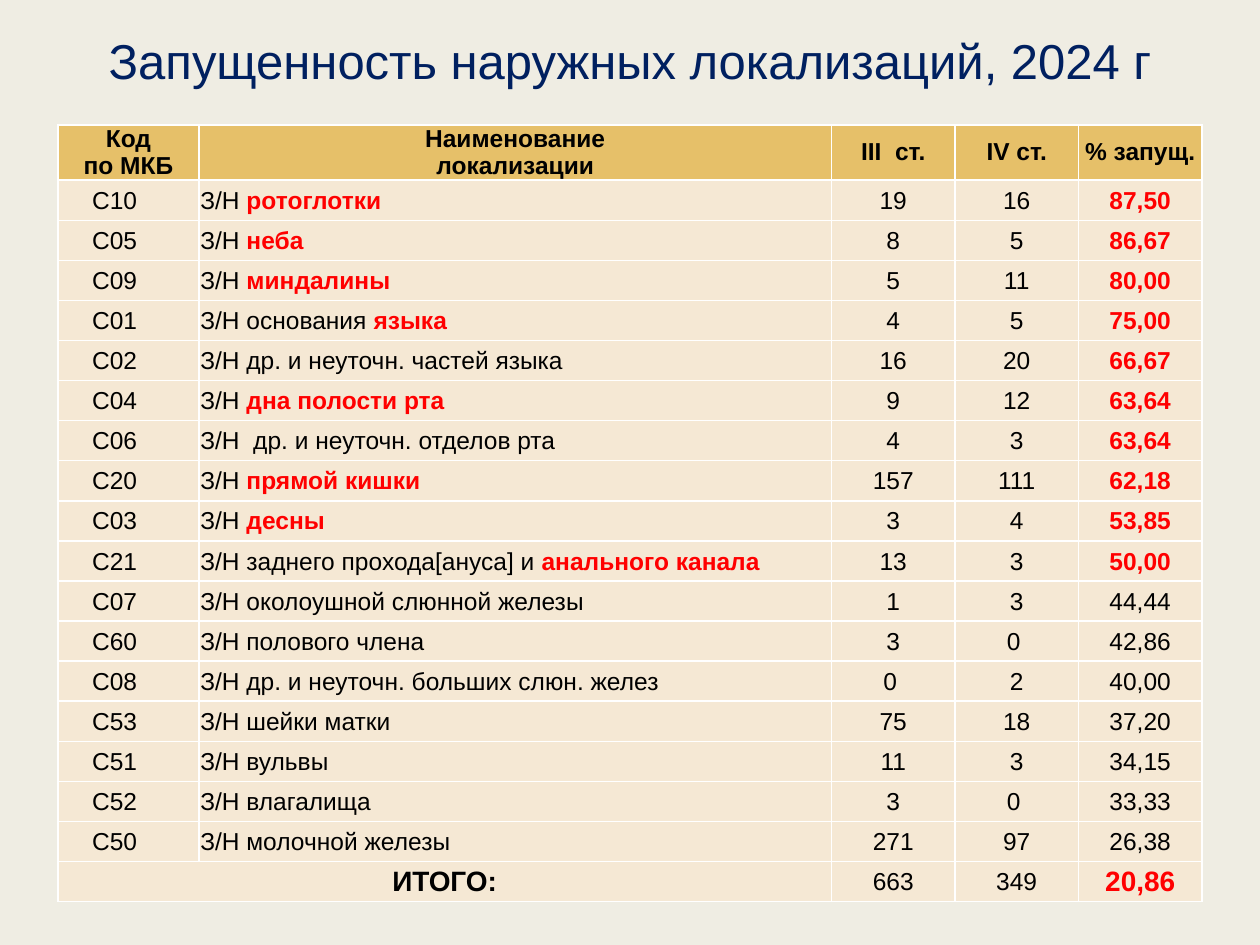
import pptx
import pptx.dml.color
import pptx.enum.text
import pptx.oxml.ns
import pptx.util
from lxml import etree

RGBColor = pptx.dml.color.RGBColor
Inches, Pt = pptx.util.Inches, pptx.util.Pt
PP_ALIGN = pptx.enum.text.PP_ALIGN
MIDDLE = pptx.enum.text.MSO_ANCHOR.MIDDLE
qn = pptx.oxml.ns.qn

BACKGROUND = RGBColor(0xEF, 0xED, 0xE3)
NAVY = RGBColor(0x00, 0x20, 0x60)
GOLD = RGBColor(0xE6, 0xC0, 0x69)
CREAM = RGBColor(0xF5, 0xE8, 0xD4)
BLACK = RGBColor(0x00, 0x00, 0x00)
RED = RGBColor(0xFF, 0x00, 0x00)
WHITE = RGBColor(0xFF, 0xFF, 0xFF)

FONT = "Arial"
SLIDE_W, SLIDE_H = 10, 7.5
COL_WIDTHS = [1.12, 5.02, 0.98, 0.98, 0.98]
TABLE_TOP, TABLE_H, HEADER_H = 0.99, 6.17, 0.44
INSET = 0.01
CODE_INSET = 0.23  # keeps the codes left of the column's middle
ZERO_INSET = 0.06  # the same for zero counts
LATE_SHARE = 50    # percentages from here on are highlighted

HEADERS = ["Код\nпо МКБ", "Наименование\nлокализации", "III  cт.", "IV ст.", "% запущ."]

# code, plain name, highlighted name, stage III, stage IV, percentage
SITES = [
    ("C10", "З/Н ", "ротоглотки", "19", "16", "87,50"),
    ("C05", "З/Н ", "неба", "8", "5", "86,67"),
    ("C09", "З/Н ", "миндалины", "5", "11", "80,00"),
    ("C01", "З/Н основания ", "языка", "4", "5", "75,00"),
    ("C02", "З/Н др. и неуточн. частей языка", "", "16", "20", "66,67"),
    ("C04", "З/Н ", "дна полости рта", "9", "12", "63,64"),
    ("C06", "З/Н  др. и неуточн. отделов рта", "", "4", "3", "63,64"),
    ("C20", "З/Н ", "прямой кишки", "157", "111", "62,18"),
    ("C03", "З/Н ", "десны", "3", "4", "53,85"),
    ("C21", "З/Н заднего прохода[ануса] и ", "анального канала", "13", "3", "50,00"),
    ("C07", "З/Н околоушной слюнной железы", "", "1", "3", "44,44"),
    ("C60", "З/Н полового члена", "", "3", "0", "42,86"),
    ("C08", "З/Н др. и неуточн. больших слюн. желез", "", "0", "2", "40,00"),
    ("C53", "З/Н шейки матки", "", "75", "18", "37,20"),
    ("C51", "З/Н вульвы", "", "11", "3", "34,15"),
    ("C52", "З/Н влагалища", "", "3", "0", "33,33"),
    ("C50", "З/Н молочной железы", "", "271", "97", "26,38"),
]


def add_run(p, text, size=14, color=BLACK, bold=False):
    r = p.add_run()
    r.text = text
    r.font.name = FONT
    r.font.size = Pt(size)
    r.font.bold = bold
    r.font.color.rgb = color


def set_borders(cell):
    tc_pr = cell._tc.get_or_add_tcPr()
    for side in ("a:lnL", "a:lnR", "a:lnT", "a:lnB"):
        ln = etree.SubElement(tc_pr, qn(side), w=str(Pt(1)))
        fill = etree.SubElement(ln, qn("a:solidFill"))
        etree.SubElement(fill, qn("a:srgbClr"), val=str(WHITE))


def format_cell(cell, fill, align=PP_ALIGN.CENTER, right=INSET):
    """Style the cell and return its paragraph, ready for runs."""
    set_borders(cell)
    cell.fill.solid()
    cell.fill.fore_color.rgb = fill
    cell.vertical_anchor = MIDDLE
    cell.margin_left = cell.margin_top = Inches(INSET)
    cell.margin_right = Inches(right)
    cell.margin_bottom = 0
    p = cell.text_frame.paragraphs[0]
    p.alignment = align
    return p


def fill_header(table):
    for col, text in enumerate(HEADERS):
        p = format_cell(table.cell(0, col), GOLD)
        p.line_spacing = 0.95
        for i, line in enumerate(text.split("\n")):
            if i:
                p.add_line_break()
            add_run(p, line, bold=True)


def fill_site(table, row, site):
    code, plain, marked, stage3, stage4, share = site
    add_run(format_cell(table.cell(row, 0), CREAM, right=CODE_INSET), code)
    p = format_cell(table.cell(row, 1), CREAM, PP_ALIGN.LEFT)
    add_run(p, plain)
    if marked:
        add_run(p, marked, color=RED, bold=True)
    for col, count in enumerate((stage3, stage4), 2):
        right = ZERO_INSET if count == "0" else INSET
        add_run(format_cell(table.cell(row, col), CREAM, right=right), count)
    late = float(share.replace(",", ".")) >= LATE_SHARE
    add_run(format_cell(table.cell(row, 4), CREAM), share,
            color=RED if late else BLACK, bold=late)


def fill_total(table, row):
    ps = [format_cell(table.cell(row, col), CREAM) for col in range(len(COL_WIDTHS))]
    table.cell(row, 0).merge(table.cell(row, 1))
    add_run(ps[0], "ИТОГО:", size=16, bold=True)
    add_run(ps[2], "663")
    add_run(ps[3], "349")
    add_run(ps[4], "20,86", size=16, color=RED, bold=True)


def add_site_table(s):
    n_rows = len(SITES) + 2
    width = sum(COL_WIDTHS)
    table = s.shapes.add_table(
        n_rows, len(COL_WIDTHS), Inches((SLIDE_W - width) / 2), Inches(TABLE_TOP),
        Inches(width), Inches(TABLE_H)).table
    for column, w in zip(table.columns, COL_WIDTHS):
        column.width = Inches(w)
    for row in table.rows:
        row.height = Inches((TABLE_H - HEADER_H) / (n_rows - 1))
    table.rows[0].height = Inches(HEADER_H)
    fill_header(table)
    for row, site in enumerate(SITES, 1):
        fill_site(table, row, site)
    fill_total(table, n_rows - 1)


def set_title(s, text):
    sp = s.shapes.title
    sp.left, sp.top, sp.width, sp.height = 0, Inches(0.29), Inches(SLIDE_W), Inches(0.44)
    tf = sp.text_frame
    tf.word_wrap = True
    tf.vertical_anchor = MIDDLE
    tf.margin_left = tf.margin_right = tf.margin_top = tf.margin_bottom = 0
    p = tf.paragraphs[0]
    p.alignment = PP_ALIGN.CENTER
    p.line_spacing = 0.89
    add_run(p, text, size=28, color=NAVY)


def main():
    prs = pptx.Presentation()
    prs.slide_width, prs.slide_height = Inches(SLIDE_W), Inches(SLIDE_H)
    s = prs.slides.add_slide(prs.slide_layouts[5])
    s.background.fill.solid()
    s.background.fill.fore_color.rgb = BACKGROUND
    set_title(s, "Запущенность наружных локализаций, 2024 г")
    add_site_table(s)
    prs.save("out.pptx")


if __name__ == "__main__":
    main()
